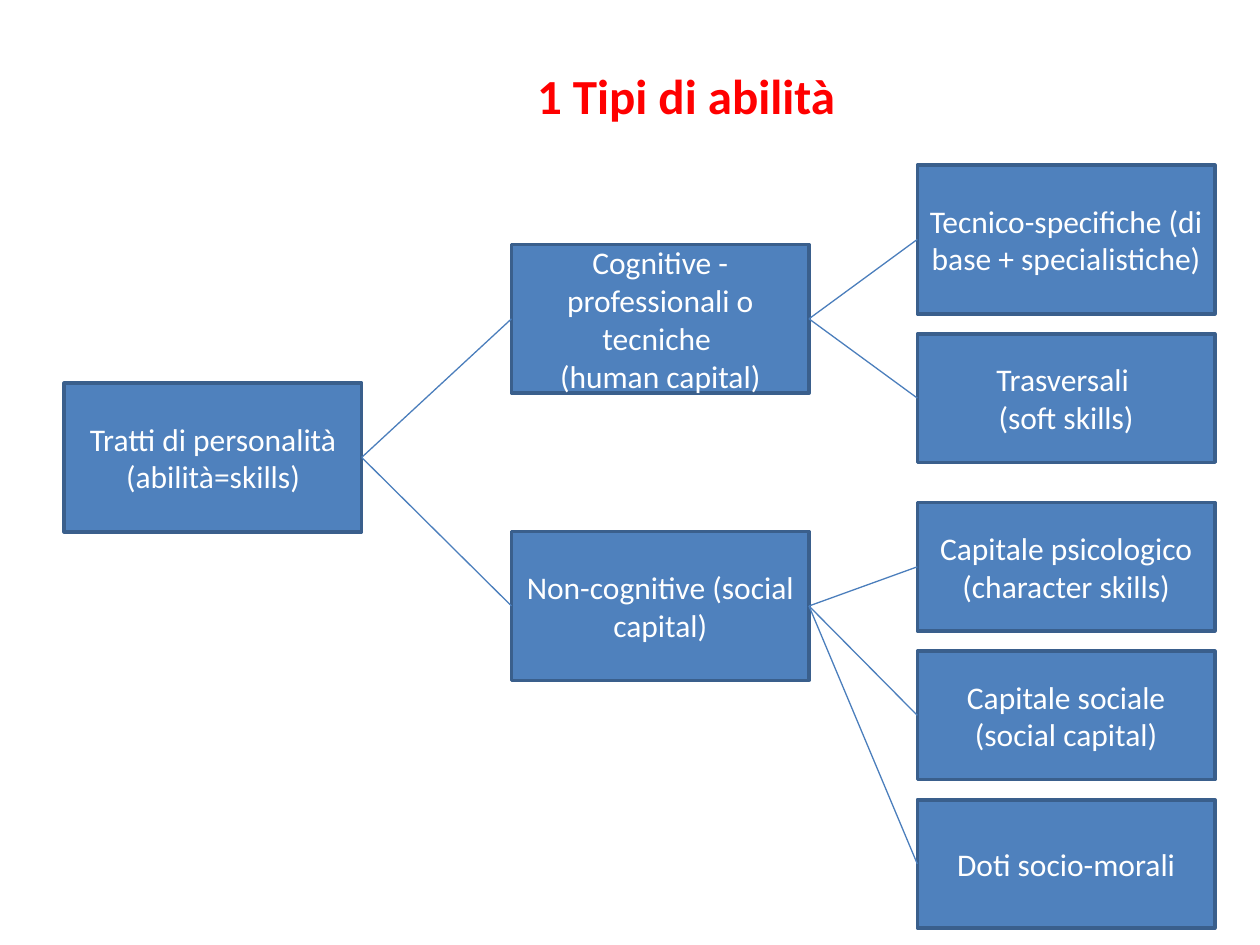
from dataclasses import dataclass

from lxml.etree import SubElement
from pptx import Presentation
from pptx.dml.color import RGBColor
from pptx.enum.shapes import MSO_CONNECTOR, MSO_SHAPE
from pptx.enum.text import MSO_ANCHOR, MSO_AUTO_SIZE, PP_ALIGN
from pptx.oxml.ns import qn
from pptx.shapes.autoshape import Shape
from pptx.slide import Slide
from pptx.util import Pt


@dataclass(frozen=True)
class Theme:
    font: str = "Calibri"
    title_size: float = 28
    box_size: float = 18
    title_color: str = "FF0000"
    box_text: str = "FFFFFF"
    box_fill: str = "4F81BD"
    box_border: str = "3A5F8C"
    link: str = "4B7EBC"
    border_width: float = 2
    link_width: float = 0.75


@dataclass(frozen=True)
class Skill:
    text: str
    top: float
    height: float
    children: tuple["Skill", ...] = ()


THEME = Theme()
COLUMN_LEFTS = (36.7, 292.3, 524.2)
BOX_WIDTH = 170
TALL, LOW = 85, 73.4
SIBLING_GAP = 11.5
GROUP_GAP = 2 * SIBLING_GAP
LEFT_SIDE, RIGHT_SIDE = 1, 3


def stack(top: float, *leaves: tuple[str, float]) -> tuple[Skill, ...]:
    """Place leaves, given as text and height, one below the other."""
    placed = []
    for text, height in leaves:
        placed.append(Skill(text, top, height))
        top += height + SIBLING_GAP
    return tuple(placed)


def write_text(shape: Shape, text: str, size: float, color: str, bold: bool) -> None:
    frame = shape.text_frame
    frame.text = text
    frame_format = {
        "word_wrap": True,
        "auto_size": MSO_AUTO_SIZE.NONE,
        "vertical_anchor": MSO_ANCHOR.MIDDLE,
    }
    for name, value in frame_format.items():
        setattr(frame, name, value)
    font_format = {"name": THEME.font, "size": Pt(size), "bold": bold}
    for paragraph in frame.paragraphs:
        paragraph.alignment = PP_ALIGN.CENTER
        for run in paragraph.runs:
            for name, value in font_format.items():
                setattr(run.font, name, value)
            run.font.color.rgb = RGBColor.from_string(color)


def add_title(slide: Slide, text: str) -> None:
    title = slide.shapes.title
    place = {"left": 65.5, "top": 9.4, "width": 653, "height": 90}
    for name, value in place.items():
        setattr(title, name, Pt(value))
    write_text(title, text, THEME.title_size, THEME.title_color, bold=True)


def add_box(slide: Slide, skill: Skill, level: int) -> Shape:
    box = slide.shapes.add_shape(
        MSO_SHAPE.RECTANGLE,
        Pt(COLUMN_LEFTS[level]), Pt(skill.top), Pt(BOX_WIDTH), Pt(skill.height),
    )
    box.shadow.inherit = False
    box.fill.solid()
    box.fill.fore_color.rgb = RGBColor.from_string(THEME.box_fill)
    box.line.color.rgb = RGBColor.from_string(THEME.box_border)
    box.line.width = Pt(THEME.border_width)
    write_text(box, skill.text, THEME.box_size, THEME.box_text, bold=False)
    return box


def add_link(slide: Slide, parent: Shape, child: Shape) -> None:
    link = slide.shapes.add_connector(MSO_CONNECTOR.STRAIGHT, 0, 0, 0, 0)
    link.begin_connect(parent, RIGHT_SIDE)
    link.end_connect(child, LEFT_SIDE)
    link.line.color.rgb = RGBColor.from_string(THEME.link)
    link.line.width = Pt(THEME.link_width)
    SubElement(link._element.spPr, qn("a:effectLst"))


def add_tree(slide: Slide, skill: Skill, level: int = 0) -> Shape:
    """Draw a skill with all its descendants and return its own box."""
    box = add_box(slide, skill, level)
    for child in skill.children:
        add_link(slide, box, add_tree(slide, child, level + 1))
    return box


def main() -> None:
    cognitive_leaves = stack(
        94.3,
        ("Tecnico-specifiche (di base + specialistiche)", TALL),
        ("Trasversali \n(soft skills)", LOW),
    )
    last = cognitive_leaves[-1]
    non_cognitive_leaves = stack(
        last.top + last.height + GROUP_GAP,
        ("Capitale psicologico\n(character skills)", LOW),
        ("Capitale sociale\n(social capital)", LOW),
        ("Doti socio-morali", LOW),
    )
    personality = Skill(
        "Tratti di personalità (abilità=skills)", 218.9, TALL,
        (
            Skill("Cognitive - professionali o tecniche \n(human capital)",
                  139.7, TALL, cognitive_leaves),
            Skill("Non-cognitive (social capital)",
                  303.8, TALL, non_cognitive_leaves),
        ),
    )

    deck = Presentation()
    deck.slide_width, deck.slide_height = Pt(720), Pt(540)
    slide = deck.slides.add_slide(deck.slide_layouts.get_by_name("Title Only"))
    add_title(slide, "1 Tipi di abilità")
    add_tree(slide, personality)
    deck.save("out.pptx")


if __name__ == "__main__":
    main()
